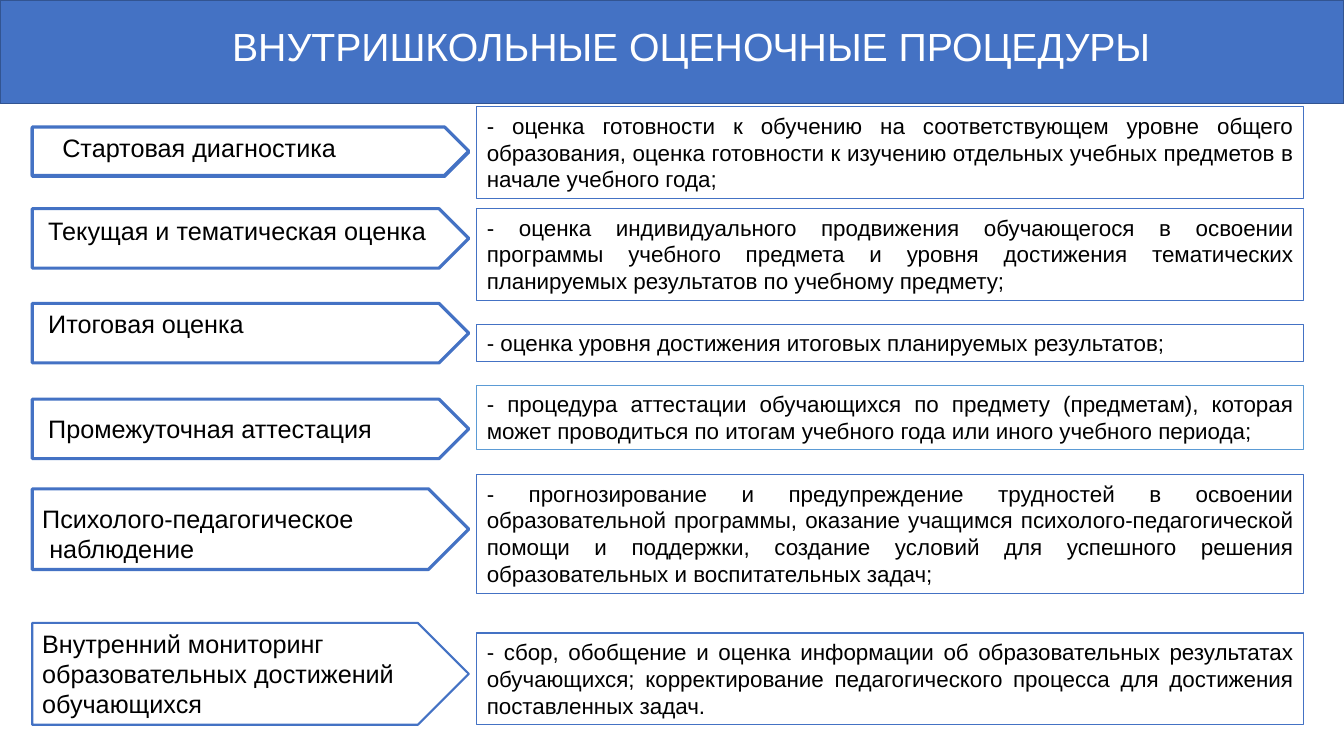
import pptx
import pptx.dml.color
import pptx.enum.shapes
import pptx.enum.text
import pptx.util

RGB = pptx.dml.color.RGBColor
KIND = pptx.enum.shapes.MSO_SHAPE
ALIGN = pptx.enum.text.PP_ALIGN
ANCHOR = pptx.enum.text.MSO_ANCHOR

BLUE = RGB(0x44, 0x72, 0xC4)
NAVY = RGB(0x32, 0x54, 0x91)
SKY = RGB(0x5B, 0x9B, 0xD5)
WHITE = RGB(0xFF, 0xFF, 0xFF)
BLACK = RGB(0x00, 0x00, 0x00)

PX = 9144
LEFT, WIDE = 32, 433
NOTE_LEFT, NOTE_WIDE = 473, 820

ARROWS = [(485, 80), (396, 59), (301, 59), (127, 48), (126, 48), (207, 59)]

LABELS = [
    (52, 126, 327, 40, "Стартовая диагностика"),
    (38, 209, 488, 40, "Текущая и тематическая оценка"),
    (38, 301, 327, 40, "Итоговая оценка"),
    (38, 405, 380, 40, "Промежуточная аттестация"),
]

NOTES = [
    (106, 91, BLUE, "- оценка готовности к обучению на соответствующем уровне общего образования, "
     "оценка готовности к изучению отдельных учебных предметов в начале учебного года;"),
    (207, 91, BLUE, "- оценка индивидуального продвижения обучающегося в освоении программы учебного "
     "предмета и уровня достижения тематических планируемых результатов по учебному предмету;"),
    (322, 37, BLUE, "- оценка уровня достижения итоговых планируемых результатов;"),
    (382, 64, SKY, "- процедура аттестации обучающихся по предмету (предметам), которая может "
     "проводиться по итогам учебного года или иного учебного периода;"),
    (471, 118, BLUE, "- прогнозирование и предупреждение трудностей в освоении образовательной "
     "программы, оказание учащимся психолого-педагогической помощи и поддержки, создание "
     "условий для успешного решения образовательных и воспитательных задач;"),
    (628, 91, BLUE, "- сбор, обобщение и оценка информации об образовательных результатах обучающихся; "
     "корректирование педагогического процесса для достижения поставленных задач."),
]


class Board:
    font = "Arial"

    def __init__(self, deck):
        self.slide = deck.slides.add_slide(deck.slide_layouts[6])

    def shape(self, kind, box, fill, line, width):
        shape = self.slide.shapes.add_shape(kind, *(n * PX for n in box))
        shape.shadow.inherit = False
        if fill is None:
            shape.fill.background()
        else:
            shape.fill.solid()
            shape.fill.fore_color.rgb = fill
        shape.line.color.rgb = line
        shape.line.width = pptx.util.Pt(width)
        return shape

    def label(self, shape, text, size, color=BLACK, align=ALIGN.LEFT, wrap=True, anchor=ANCHOR.TOP):
        frame = shape.text_frame
        frame.text = text
        frame.word_wrap = wrap
        frame.vertical_anchor = anchor
        for para in frame.paragraphs:
            para.alignment = align
            for run in para.runs:
                run.font.name = self.font
                run.font.size = pptx.util.Pt(size)
                run.font.color.rgb = color
        return frame

    def text(self, box, text, size=18, **style):
        shape = self.slide.shapes.add_textbox(*(n * PX for n in box))
        return self.label(shape, text, size, **style)

    def arrow(self, top, high, fill=WHITE, width=2.25):
        return self.shape(KIND.PENTAGON, (LEFT, top, WIDE, high), fill, BLUE, width)

    def note(self, top, high, line, text):
        shape = self.shape(KIND.RECTANGLE, (NOTE_LEFT, top, NOTE_WIDE, high), None, line, 0.75)
        self.label(shape, text, 16, align=ALIGN.JUSTIFY)


def main():
    deck = pptx.Presentation()
    deck.slide_width = 1333 * PX
    deck.slide_height = 750 * PX
    board = Board(deck)

    board.shape(KIND.RECTANGLE, (0, 0, 1333, 103), BLUE, NAVY, 1)
    title = board.text((52, 14, 1267, 69), "ВНУТРИШКОЛЬНЫЕ ОЦЕНОЧНЫЕ ПРОЦЕДУРЫ", 28,
                       color=WHITE, align=ALIGN.CENTER, anchor=ANCHOR.MIDDLE)
    title.paragraphs[0].line_spacing = 0.9

    for top, high in ARROWS:
        board.arrow(top, high)
    for *box, text in LABELS:
        board.text(box, text)

    watch = board.text((32, 494, 332, 71), "Психолого-педагогическое\nнаблюдение", wrap=False)
    watch.paragraphs[1]._p.get_or_add_pPr().set("marL", str(7 * PX))

    audit = board.arrow(618, 101, None, 1.5)
    board.label(audit, "Внутренний мониторинг образовательных достижений обучающихся", 18)

    for note in NOTES:
        board.note(*note)

    deck.save("out.pptx")


if __name__ == "__main__":
    main()
